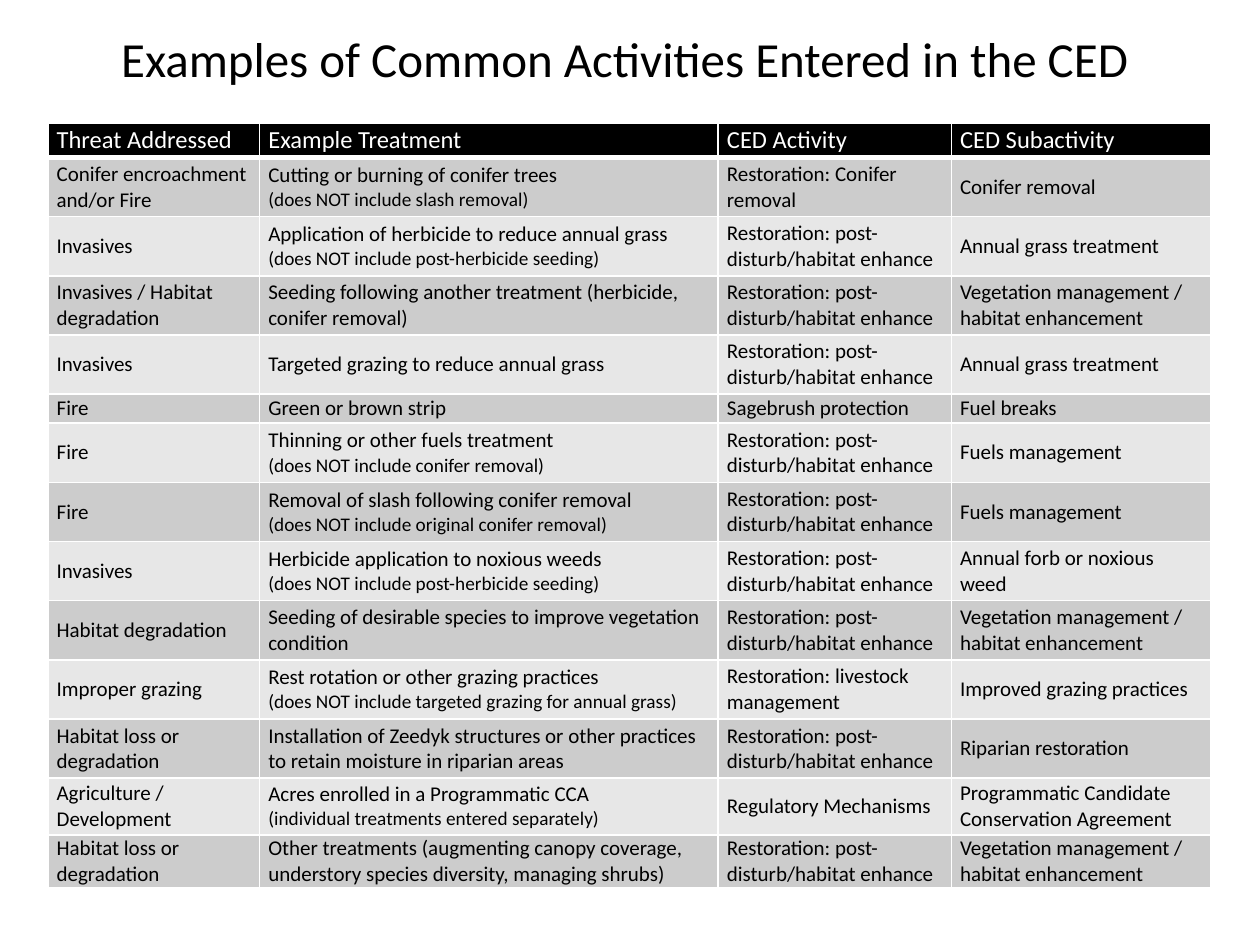
"""Build a slide with a table of common activities entered in the CED."""
from lxml.etree import SubElement
from pptx import Presentation
from pptx.dml.color import RGBColor
from pptx.enum.text import MSO_ANCHOR as Anchor, PP_ALIGN as Align
from pptx.oxml.ns import qn
from pptx.util import Inches, Pt

BLACK = RGBColor(0x00, 0x00, 0x00)
WHITE = RGBColor(0xFF, 0xFF, 0xFF)
DARK_BAND = RGBColor(0xCC, 0xCC, 0xCC)
LIGHT_BAND = RGBColor(0xE7, 0xE7, 0xE7)
FONT = "Calibri"

ENHANCE = "Restoration: post-disturb/habitat enhance"
VEGETATION = "Vegetation management / habitat enhancement"
COLUMN_WIDTHS = [1.68, 3.64, 1.85, 2.06]
ROW_HEIGHTS = [0.27] + [0.47] * 4 + [0.23] + [0.47] * 6 + [0.45, 0.42]
ROWS = [
    ("Threat Addressed", "Example Treatment", "CED Activity", "CED Subactivity"),
    ("Conifer encroachment and/or Fire",
     "Cutting or burning of conifer trees\n(does NOT include slash removal)",
     "Restoration: Conifer removal", "Conifer removal"),
    ("Invasives",
     "Application of herbicide to reduce annual grass\n(does NOT include post-herbicide seeding)",
     ENHANCE, "Annual grass treatment"),
    ("Invasives / Habitat degradation",
     "Seeding following another treatment (herbicide, conifer removal)",
     ENHANCE, VEGETATION),
    ("Invasives", "Targeted grazing to reduce annual grass",
     ENHANCE, "Annual grass treatment"),
    ("Fire", "Green or brown strip", "Sagebrush protection", "Fuel breaks"),
    ("Fire",
     "Thinning or other fuels treatment\n(does NOT include conifer removal)",
     ENHANCE, "Fuels management"),
    ("Fire",
     "Removal of slash following conifer removal\n(does NOT include original conifer removal)",
     ENHANCE, "Fuels management"),
    ("Invasives",
     "Herbicide application to noxious weeds\n(does NOT include post-herbicide seeding)",
     ENHANCE, "Annual forb or noxious weed"),
    ("Habitat degradation",
     "Seeding of desirable species to improve vegetation condition",
     ENHANCE, VEGETATION),
    ("Improper grazing",
     "Rest rotation or other grazing practices\n"
     "(does NOT include targeted grazing for annual grass)",
     "Restoration: livestock management", "Improved grazing practices"),
    ("Habitat loss or degradation",
     "Installation of Zeedyk structures or other practices to retain moisture in riparian areas",
     ENHANCE, "Riparian restoration"),
    ("Agriculture / Development",
     "Acres enrolled in a Programmatic CCA\n(individual treatments entered separately)",
     "Regulatory Mechanisms", "Programmatic Candidate Conservation Agreement"),
    ("Habitat loss or degradation",
     "Other treatments (augmenting canopy coverage, "
     "understory species diversity, managing shrubs)",
     ENHANCE, VEGETATION),
]


def style_text(paragraph, size, color):
    font = paragraph.font
    font.name, font.size, font.bold = FONT, Pt(size), False
    font.color.rgb = color


def add_borders(cell, bottom_width):
    properties = cell._tc.get_or_add_tcPr()
    for side, width in (("L", 1), ("R", 1), ("T", 1), ("B", bottom_width)):
        line = SubElement(properties, qn(f"a:ln{side}"), w=str(Pt(width)))
        fill = SubElement(line, qn("a:solidFill"))
        SubElement(fill, qn("a:srgbClr"), val=str(WHITE))


presentation = Presentation()
presentation.slide_width = Inches(10)
presentation.slide_height = Inches(7.5)
slide = presentation.slides.add_slide(presentation.slide_layouts[5])

title = slide.shapes.title
title.left, title.top = Inches(0), Inches(0.18)
title.width, title.height = Inches(10), Inches(0.57)
title.text_frame.text = "Examples of Common Activities Entered in the CED "
title.text_frame.vertical_anchor = Anchor.TOP
title_paragraph = title.text_frame.paragraphs[0]
title_paragraph.alignment = Align.CENTER
style_text(title_paragraph, 28, BLACK)

table = slide.shapes.add_table(
    len(ROWS), len(COLUMN_WIDTHS), Inches(0.38), Inches(0.98),
    Inches(sum(COLUMN_WIDTHS)), Inches(sum(ROW_HEIGHTS))).table
for column, width in zip(table.columns, COLUMN_WIDTHS):
    column.width = Inches(width)

for row_index, (texts, height) in enumerate(zip(ROWS, ROW_HEIGHTS)):
    is_header = row_index == 0
    band = BLACK if is_header else DARK_BAND if row_index % 2 else LIGHT_BAND
    table.rows[row_index].height = Inches(height)
    for column_index, text in enumerate(texts):
        cell = table.cell(row_index, column_index)
        cell.text_frame.text = text
        cell.vertical_anchor = Anchor.MIDDLE
        cell.margin_left = cell.margin_right = Inches(0.07)
        cell.margin_top = cell.margin_bottom = Inches(0)
        add_borders(cell, 3 if is_header else 1)
        cell.fill.solid()
        cell.fill.fore_color.rgb = band
        for line_index, paragraph in enumerate(cell.text_frame.paragraphs):
            size = 14 if is_header else 11 if line_index else 12
            style_text(paragraph, size, WHITE if is_header else BLACK)

presentation.save("out.pptx")
